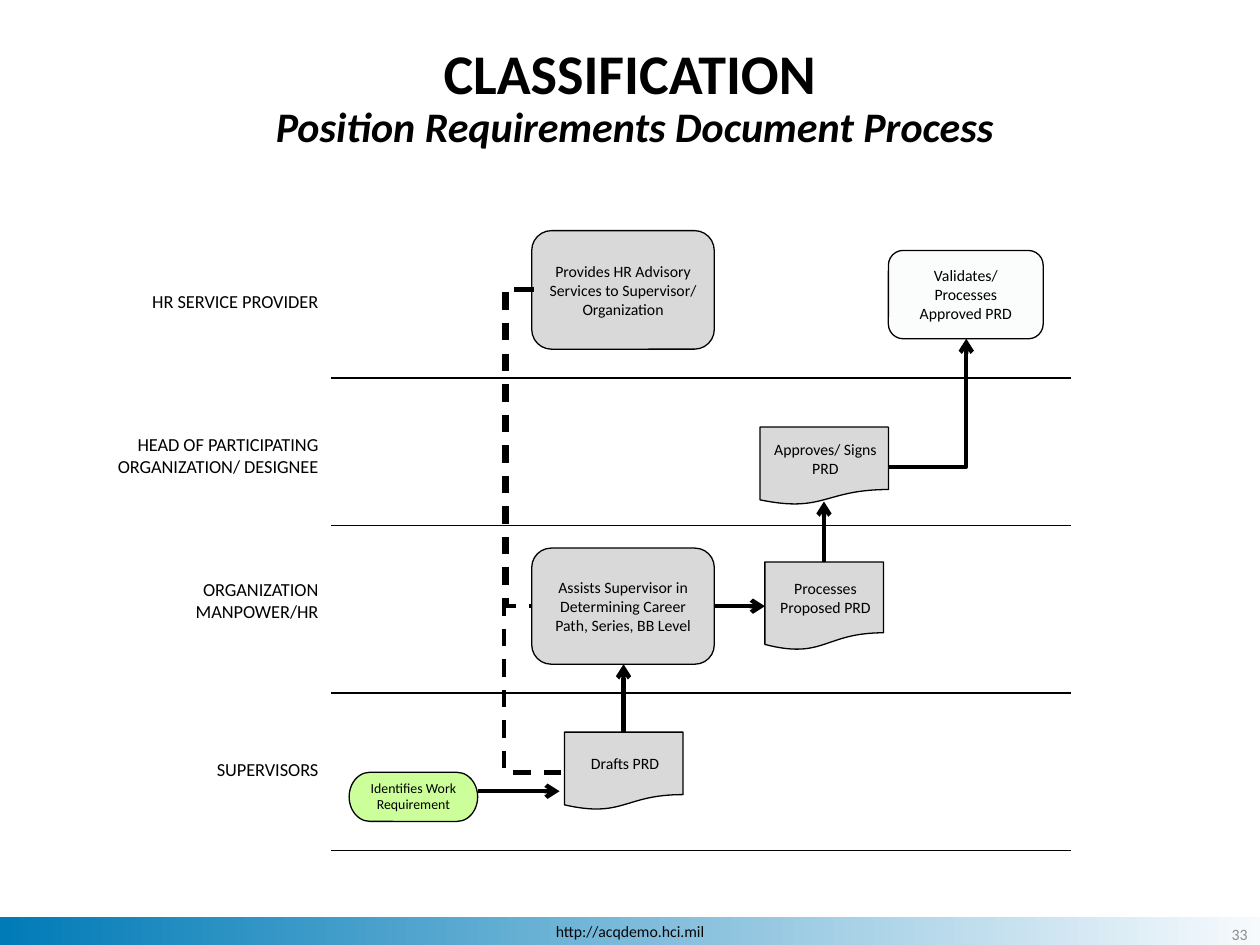
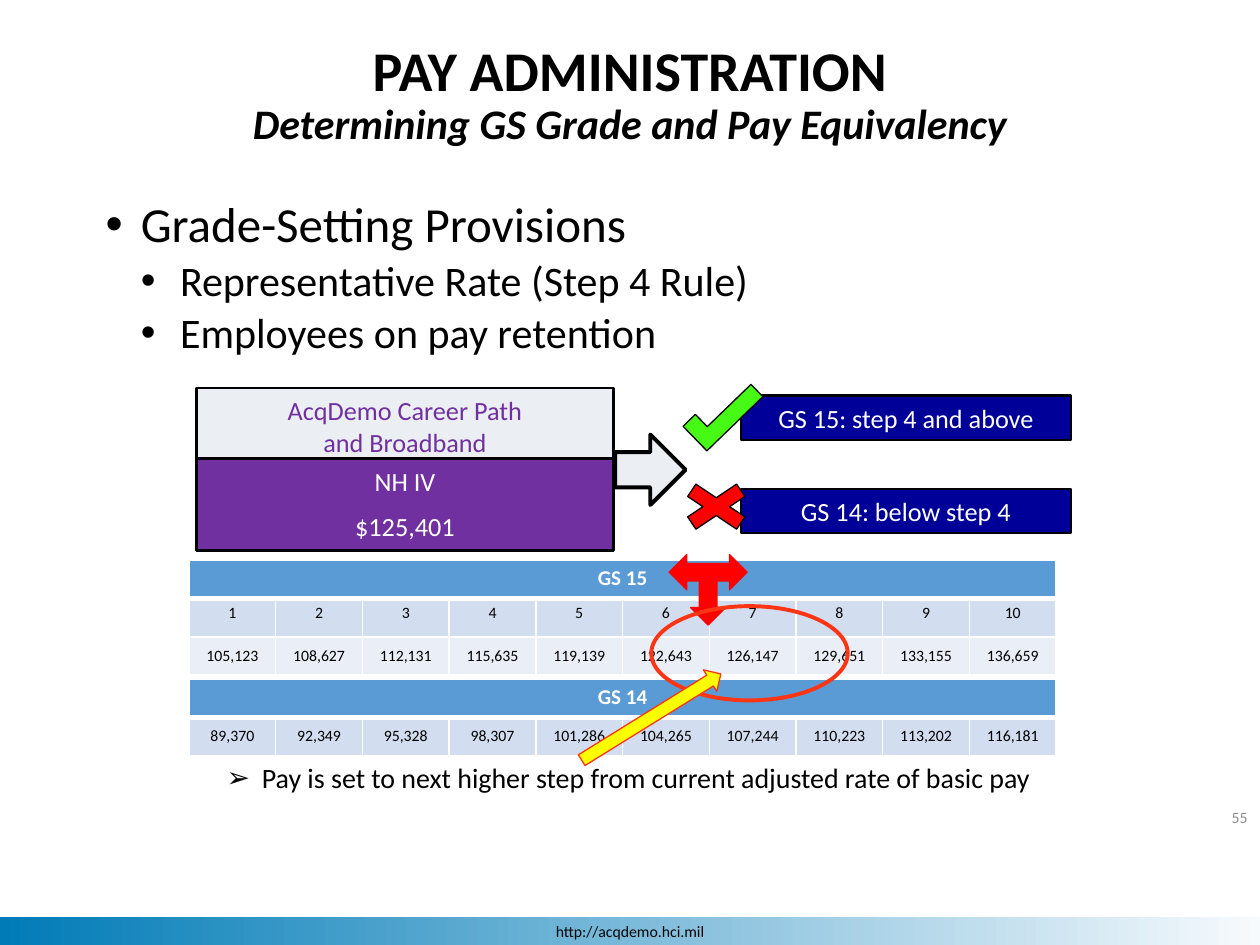
from lxml.etree import SubElement
from pptx import Presentation
from pptx.dml.color import RGBColor
from pptx.enum.dml import MSO_LINE
from pptx.enum.shapes import MSO_CONNECTOR, MSO_SHAPE
from pptx.enum.text import MSO_ANCHOR, PP_ALIGN
from pptx.oxml.ns import qn
from pptx.util import Cm, Pt

FONT = "Calibri"
BLACK, WHITE, GRAY, PALE = "000000", "FFFFFF", "D9D9D9", "EBEEF2"
NAVY, PURPLE, RED, FLAME = "000099", "7030A0", "FF0000", "FC3514"
HEAD, ODD, EVEN = "5B9BD5", "D2DEEF", "EAEFF7"
WIDE, HIGH = 25.4, 19.05
LEFT, MID, RIGHT = PP_ALIGN.LEFT, PP_ALIGN.CENTER, PP_ALIGN.RIGHT
INSET = (0.25, 0.13, 0.25, 0.13)

LANES = [7.62, 10.59, 13.97, 17.15]
LABELS = [
    ("HR SERVICE PROVIDER", 2.62, 5.71, 0.71),
    ("HEAD OF PARTICIPATING ORGANIZATION/ DESIGNEE", 0, 8.61, 1.45),
    ("ORGANIZATION MANPOWER/HR", 2.62, 11.53, 1.45),
    ("SUPERVISORS", 2.97, 15.16, 0.89),
]
LABEL_END = 6.67

DOC = (MSO_SHAPE.FLOWCHART_DOCUMENT, GRAY, 9, (0.05, 0.1, 0, 0.1), MSO_ANCHOR.MIDDLE)
STEP = (MSO_SHAPE.FLOWCHART_ALTERNATE_PROCESS, GRAY, 9, (0.2, 0.1, 0.2, 0.1), MSO_ANCHOR.MIDDLE)
LAST = (STEP[0], "FBFCFC", *STEP[2:])
START = (MSO_SHAPE.FLOWCHART_TERMINATOR, "CCFF99", 7.9, (0, 0, 0, 0), MSO_ANCHOR.TOP)
STEPS = [
    ("Identifies Work Requirement", START, (7.04, 15.57, 2.59, 0.99)),
    ("Drafts PRD", DOC, (11.38, 14.76, 2.39, 1.57)),
    ("Assists Supervisor in Determining Career Path, Series, BB Level", STEP, (10.72, 11.05, 3.68, 2.34)),
    ("Processes Proposed PRD", DOC, (15.42, 11.33, 2.39, 1.78)),
    ("Approves/ Signs PRD", DOC, (15.32, 8.61, 2.59, 1.57)),
    ("Provides HR Advisory Services to Supervisor/ Organization", STEP, (10.72, 4.65, 3.68, 2.39)),
    ("Validates/ Processes Approved PRD", LAST, (17.91, 5.05, 3.12, 1.78)),
]
ARROWS = [
    (12.57, 14.76, 12.57, 13.39),
    (14.4, 12.22, 15.42, 12.22),
    (16.61, 11.33, 16.61, 10.11),
    (9.63, 15.95, 11.28, 15.95),
]
SIGNED = (17.91, 9.41, 19.48, 6.83)
ADVICE = [((10.77, 5.84, 10.72, 12.22), 10.21), ((10.72, 5.84, 11.38, 15.57), 10.16)]

POINTS = [
    ("Grade-Setting Provisions", 28, 0.84, 0.71),
    ("Representative Rate (Step 4 Rule)", 24, 1.63, 0.79),
    ("Employees on pay retention", 24, 1.63, 0.79),
]
PANELS = [
    ("GS 15: step 4 and above", NAVY, WHITE, (14.94, 7.98, 6.65, 0.89), 0),
    ("GS 14: below step 4", NAVY, WHITE, (14.94, 9.86, 6.65, 0.89), 0),
    ("AcqDemo Career Path\nand Broadband", PALE, PURPLE, (3.96, 7.82, 8.41, 1.55), 0),
    ("NH IV\n$125,401", PURPLE, WHITE, (3.96, 9.25, 8.41, 1.85), 7.5),
]
PAY15 = ["105,123", "108,627", "112,131", "115,635", "119,139",
         "122,643", "126,147", "129,651", "133,155", "136,659"]
PAY14 = ["89,370", "92,349", "95,328", "98,307", "101,286",
         "104,265", "107,244", "110,223", "113,202", "116,181"]
TABLES = [
    ("GS 15", 11.3, [[str(n) for n in range(1, 11)], PAY15]),
    ("GS 14", 13.69, [PAY14]),
]
MARKS = [
    (MSO_SHAPE.MATH_MULTIPLY, (13.49, 9.58, 1.9, 1.27), 0, RED, BLACK, 0.75),
    (MSO_SHAPE.CORNER, (13.79, 7.95, 1.57, 0.69), 315.9, "47FA16", BLACK, 0.75),
    (MSO_SHAPE.RIGHT_ARROW, (12.4, 8.76, 1.42, 1.42), 0, PALE, BLACK, 2.25),
    (MSO_SHAPE.LEFT_RIGHT_UP_ARROW, (13.49, 11.18, 1.57, 1.42), 180, RED, RED, 0.75),
    (MSO_SHAPE.OVAL, (13.13, 12.22, 3.96, 1.9), 0, None, FLAME, 2.25),
    (MSO_SHAPE.RIGHT_ARROW, (11.48, 14.2, 3.3, 0.51), 328.2, "FFFF00", FLAME, 0.75),
]
NOTE = "Pay is set to next higher step from current adjusted rate of basic pay"


def tint(code):
    return RGBColor.from_string(code)


def style(para, size, color=BLACK, align=MID, bold=False):
    para.alignment = align
    for run in para.runs:
        font = run.font
        font.name, font.size, font.bold = FONT, Pt(size), bold
        font.color.rgb = tint(color)


def write(frame, text, size, color=BLACK, align=MID, anchor=MSO_ANCHOR.TOP, inset=INSET):
    frame.word_wrap = True
    frame.vertical_anchor = anchor
    (frame.margin_left, frame.margin_top,
     frame.margin_right, frame.margin_bottom) = map(Cm, inset)
    frame.text = text
    for para in frame.paragraphs:
        style(para, size, color, align)


def label(slide, box, text, size, **look):
    frame = slide.shapes.add_textbox(*map(Cm, box)).text_frame
    write(frame, text, size, **look)
    return frame


def draw(slide, kind, box, fill, line=BLACK, width=0.75):
    shape = slide.shapes.add_shape(kind, *map(Cm, box))
    shape.shadow.inherit = False
    if fill:
        shape.fill.solid()
        shape.fill.fore_color.rgb = tint(fill)
    else:
        shape.fill.background()
    shape.line.color.rgb = tint(line)
    shape.line.width = Pt(width)
    return shape


def link(slide, ends, width=2.5, kind=MSO_CONNECTOR.STRAIGHT, head=True):
    line = slide.shapes.add_connector(kind, *map(Cm, ends))
    line.line.color.rgb = tint(BLACK)
    line.line.width = Pt(width)
    props = line._element.spPr
    if head:
        SubElement(props.find(qn("a:ln")), qn("a:tailEnd"), type="arrow")
    SubElement(props, qn("a:effectLst"))
    return line, props.find(qn("a:prstGeom"))


def bullet(para, mark, left, hang):
    props = para._p.get_or_add_pPr()
    props.set("marL", str(Cm(left)))
    props.set("indent", str(-Cm(hang)))
    color = SubElement(props, qn("a:buClr"))
    SubElement(color, qn("a:srgbClr"), val=BLACK)
    SubElement(props, qn("a:buFont"), typeface="Arial")
    SubElement(props, qn("a:buChar"), char=mark)


def base(deck, title, second, top, page, low):
    slide = deck.slides.add_slide(deck.slide_layouts[6])
    band = draw(slide, MSO_SHAPE.RECTANGLE, (0, 18.49, WIDE, 0.56), WHITE)
    band.line.fill.background()
    band.fill.gradient()
    band.fill.gradient_angle = 0
    for stop, code in zip(band.fill.gradient_stops, ("007BB7", "F7FAFD")):
        stop.color.rgb = tint(code)
    write(band.text_frame, "http://acqdemo.hci.mil", 9, "060606", anchor=MSO_ANCHOR.MIDDLE)
    para = label(slide, (0, top, WIDE, 2.5), title + "\v" + second, 32).paragraphs[0]
    style(para, 32, bold=True)
    para.line_spacing = 0.9
    para.runs[1].font.size = Pt(24)
    para.runs[1].font.italic = True
    label(slide, (21.11, low, 4.29, 0.43), page, 9, color="8C8C8C",
          align=RIGHT, anchor=MSO_ANCHOR.MIDDLE)
    return slide


def flow(deck):
    slide = base(deck, "CLASSIFICATION", " Position Requirements Document Process", 0.79, "33", 18.62)
    for y in LANES:
        link(slide, (6.68, y, 21.59, y), 0.75, head=False)
    for text, left, top, tall in LABELS:
        label(slide, (left, top, LABEL_END - left, tall), text, 10.5, align=RIGHT)
    for text, (kind, fill, size, inset, anchor), box in STEPS:
        shape = draw(slide, kind, box, fill)
        write(shape.text_frame, text, size, anchor=anchor, inset=inset)
    for ends in ARROWS:
        link(slide, ends)
    bend = link(slide, SIGNED, kind=MSO_CONNECTOR.ELBOW)[1]
    bend.set("prst", "bentConnector2")
    for ends, via in ADVICE:
        line, bend = link(slide, ends, kind=MSO_CONNECTOR.ELBOW, head=False)
        line.line.dash_style = MSO_LINE.DASH
        ratio = round((via - ends[0]) / (ends[2] - ends[0]) * 100000)
        SubElement(bend.find(qn("a:avLst")), qn("a:gd"), name="adj1", fmla=f"val {ratio}")


def paint(cell, text, fill, size=9, color=BLACK, inset=(0, 0, 0, 0),
          anchor=MSO_ANCHOR.MIDDLE, under=1):
    props = cell._tc.get_or_add_tcPr()
    for side in "LRTB":
        edge = SubElement(props, qn("a:ln" + side), w=str(Pt(under if side == "B" else 1)))
        ink = SubElement(edge, qn("a:solidFill"))
        SubElement(ink, qn("a:srgbClr"), val=WHITE)
    cell.fill.solid()
    cell.fill.fore_color.rgb = tint(fill)
    cell.text = text
    cell.vertical_anchor = anchor
    (cell.margin_left, cell.margin_top,
     cell.margin_right, cell.margin_bottom) = map(Cm, inset)
    style(cell.text_frame.paragraphs[0], size, color, bold=size > 9)


def grid(slide, name, top, rows):
    count, tall = len(rows) + 1, 0.77
    table = slide.shapes.add_table(
        count, 10, *map(Cm, (3.81, top, 17.48, tall * count))).table
    for row in table.rows:
        row.height = Cm(tall)
    pad = {"inset": (0.18, 0.1, 0.18, 0.1), "anchor": MSO_ANCHOR.TOP}
    table.cell(0, 0).merge(table.cell(0, 9))
    for x in range(10):
        paint(table.cell(0, x), "" if x else name, HEAD, 12, WHITE, under=3, **pad)
    for y, row in enumerate(rows, 1):
        look = pad if row[0] == "1" else {}
        for x, text in enumerate(row):
            paint(table.cell(y, x), text, ODD if y % 2 else EVEN, **look)


def pay(deck):
    slide = base(deck, "PAY ADMINISTRATION", "Determining GS Grade and Pay Equivalency", 0.74, "55", 16.26)
    lines = "\n".join(point[0] for point in POINTS)
    frame = label(slide, (1.75, 3.91, 21.89, 3.7), lines, 24, align=LEFT)
    for n, (para, (_, size, left, hang)) in enumerate(zip(frame.paragraphs, POINTS)):
        para.line_spacing = 0.9
        para.space_before = Pt(3.8 if n else 0)
        bullet(para, "•", left, hang)
        style(para, size, align=LEFT)
    for text, fill, color, box, gap in PANELS:
        shape = draw(slide, MSO_SHAPE.RECTANGLE, box, fill, width=1.5)
        write(shape.text_frame, text, 15, color)
        for para in shape.text_frame.paragraphs[1:]:
            para.space_before = Pt(gap)
    for table in TABLES:
        grid(slide, *table)
    for kind, box, turn, *look in MARKS:
        draw(slide, kind, box, *look).rotation = turn
    note = label(slide, (3.81, 15.21, 17.45, 0.94), NOTE, 16, align=LEFT)
    bullet(note.paragraphs[0], "➢", 1.22, 0.71)


def main():
    deck = Presentation()
    deck.slide_width, deck.slide_height = Cm(WIDE), Cm(HIGH)
    flow(deck)
    pay(deck)
    deck.save("out.pptx")


if __name__ == "__main__":
    main()
